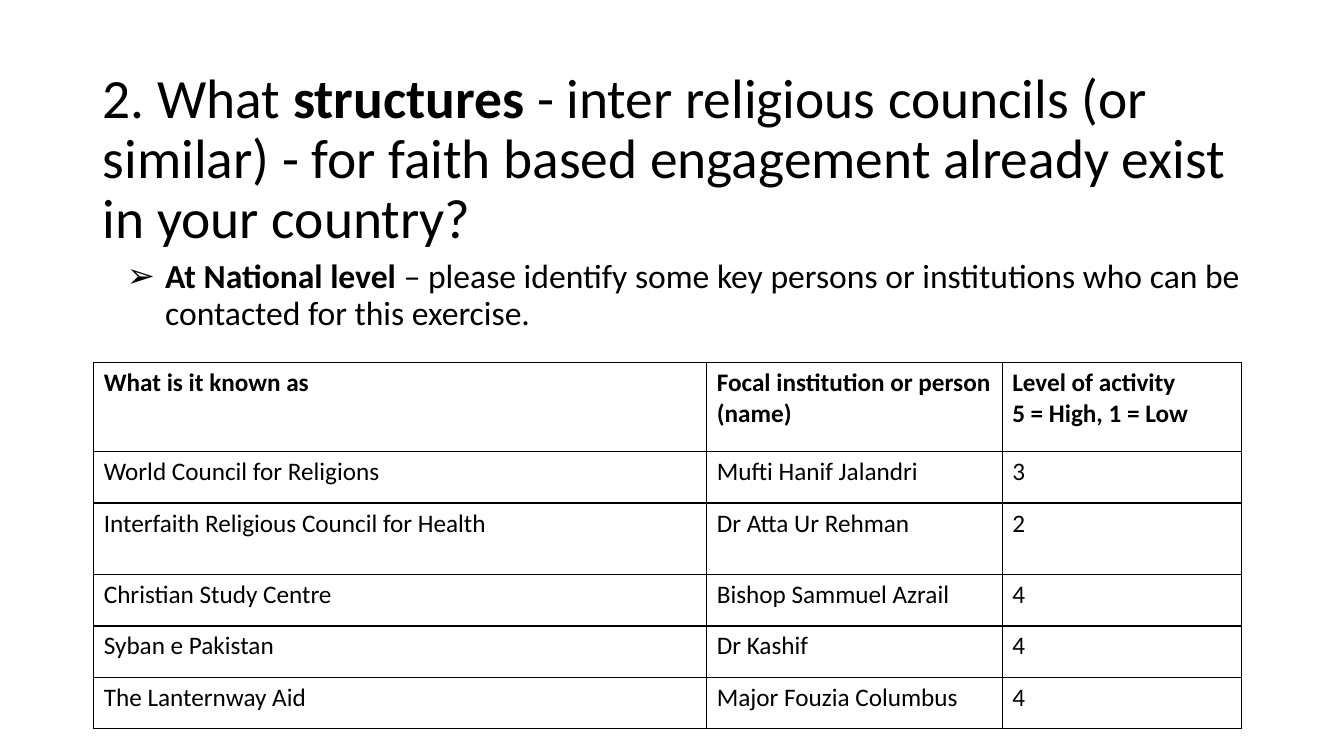
from lxml import etree
from pptx import Presentation, util as u
from pptx.dml.color import RGBColor
from pptx.enum import text
from pptx.oxml import parse_xml
from pptx.oxml.ns import nsdecls, qn

Inches, Pt = u.Inches, u.Pt
INK = "000000"


def add_text(p, words, size, bold=False, color=INK, font="Calibri"):
    r = p.add_run()
    r.text = words
    r.font.size, r.font.bold, r.font.name = Pt(size), bold, font
    r.font.color.rgb = RGBColor.from_string(color)


def add_borders(cell, color=INK, width=1):
    tcPr = cell._tc.get_or_add_tcPr()
    for i, side in enumerate(("lnL", "lnR", "lnT", "lnB")):
        tcPr.insert(i, parse_xml(
            f'<a:{side} {nsdecls("a")} w="{Pt(width)}"><a:solidFill>'
            f'<a:srgbClr val="{color}"/></a:solidFill></a:{side}>'))


prs = Presentation()
prs.slide_width, prs.slide_height = Inches(13.33), Inches(7.5)
s = prs.slides.add_slide(prs.slide_layouts[5])

# Title
sp = s.shapes.title
sp.left, sp.top, sp.width, sp.height = map(Inches, (0.92, 0.87, 11.5, 1.45))
tf = sp.text_frame
tf.word_wrap = True
tf.auto_size = text.MSO_AUTO_SIZE.NONE
tf.vertical_anchor = text.MSO_ANCHOR.MIDDLE
p = tf.paragraphs[0]
p.alignment, p.line_spacing = text.PP_ALIGN.LEFT, 0.9
add_text(p, "2. What ", 39.6)
add_text(p, "structures", 39.6, bold=True)
add_text(p, " - inter religious councils (or similar) - for faith based "
            "engagement already exist in your country?", 39.6)

# Bulleted instruction
sp = s.shapes.add_textbox(Inches(0.92), Inches(2.53), Inches(11.5), Inches(0.86))
tf = sp.text_frame
tf.word_wrap = True
p = tf.paragraphs[0]
p.level, p.line_spacing, p.space_before = 1, 0.9, Pt(5)
add_text(p, "At National level", 24, bold=True)
add_text(p, " – please identify some key persons or institutions who can be "
            "contacted for this exercise.", 24)
pPr = p._p.get_or_add_pPr()
pPr.set("marL", str(Inches(0.62)))
pPr.set("indent", str(Inches(-0.38)))
etree.SubElement(pPr, qn("a:buFont")).set("typeface", "Calibri")
etree.SubElement(pPr, qn("a:buChar")).set("char", "➢")

# Table of national structures
rows = [
    ("What is it known as", "Focal institution or person (name)",
     "Level of activity\n5 = High, 1 = Low"),
    ("World Council for Religions", "Mufti Hanif Jalandri", "3"),
    ("Interfaith Religious Council for Health", "Dr Atta Ur Rehman", "2"),
    ("Christian Study Centre", "Bishop Sammuel Azrail", "4"),
    ("Syban e Pakistan", "Dr Kashif", "4"),
    ("The Lanternway Aid", "Major Fouzia Columbus", "4"),
]
widths = (6.08, 2.93, 2.37)
heights = (0.88, 0.51, 0.71, 0.51, 0.51, 0.51)
tbl = s.shapes.add_table(len(rows), len(widths), Inches(0.93), Inches(3.6),
                         Inches(sum(widths)), Inches(sum(heights))).table
tbl.first_row = tbl.horz_banding = False
for col, width in zip(tbl.columns, widths):
    col.width = Inches(width)
for i, (row, height) in enumerate(zip(rows, heights)):
    tbl.rows[i].height = Inches(height)
    for j, words in enumerate(row):
        cell = tbl.cell(i, j)
        cell.fill.background()
        add_borders(cell)
        tf = cell.text_frame
        for k, line in enumerate(words.split("\n")):
            p = tf.add_paragraph() if k else tf.paragraphs[0]
            add_text(p, line, 18, bold=i == 0)

prs.save("out.pptx")
